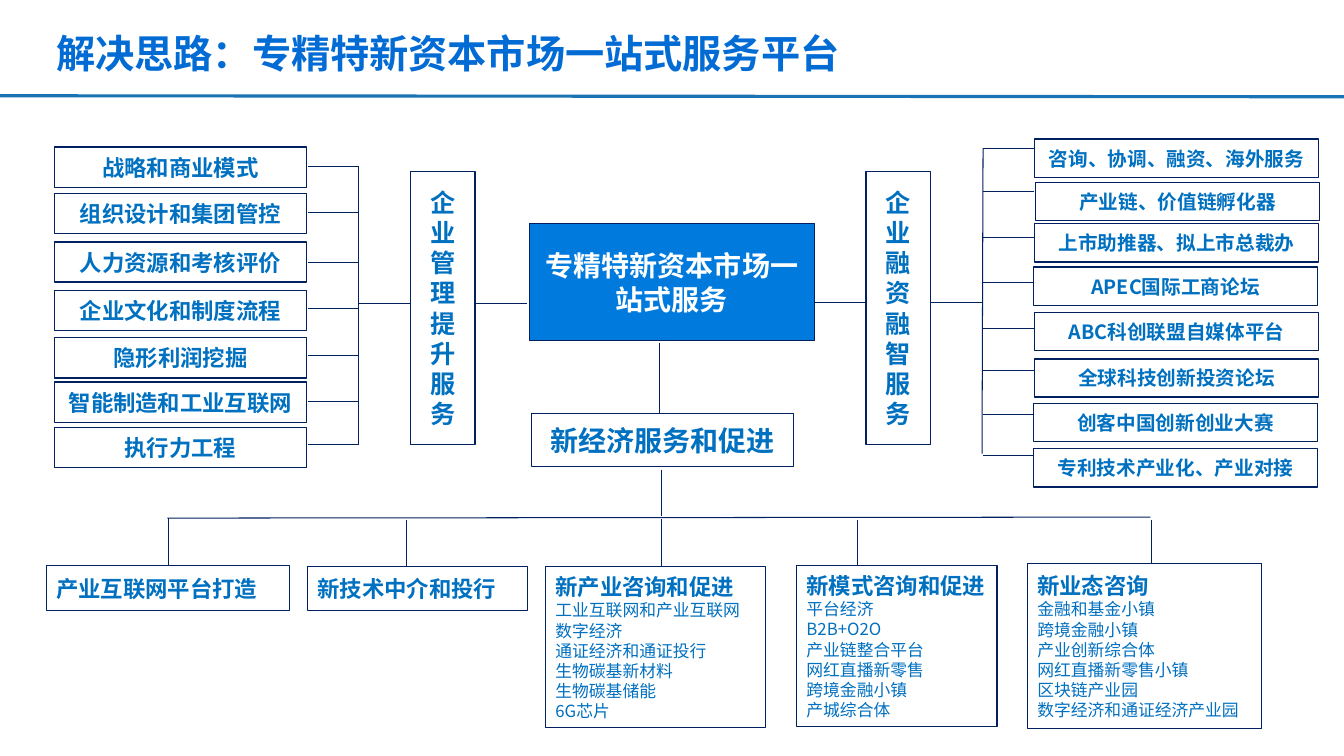
import pptx
import pptx.util
import pptx.dml.color
import pptx.enum.shapes
import pptx.enum.text
import pptx.oxml.ns
import lxml.etree

Inches = pptx.util.Inches
Pt = pptx.util.Pt
qn = pptx.oxml.ns.qn
RGBColor = pptx.dml.color.RGBColor
PP_ALIGN = pptx.enum.text.PP_ALIGN

FONT = "Noto Sans CJK SC"
COLORS = {
    "title": "026CD4",
    "rule": "1A73B3",
    "center": "007ADD",
    "outline": "002060",
    "text": "0070C0",
    "white": "FFFFFF",
}

presentation = pptx.Presentation()
presentation.slide_width = Inches(13.33)
presentation.slide_height = Inches(7.5)
slide = presentation.slides.add_slide(presentation.slide_layouts[6])
slide.background.fill.solid()
slide.background.fill.fore_color.rgb = RGBColor.from_string(COLORS["white"])


def add_line(x1, y1, x2, y2, color="outline", width=0.75):
    connector = slide.shapes.add_connector(
        pptx.enum.shapes.MSO_CONNECTOR.STRAIGHT,
        Inches(x1), Inches(y1), Inches(x2), Inches(y2))
    connector.line.color.rgb = RGBColor.from_string(COLORS[color])
    connector.line.width = Pt(width)
    properties = connector._element.find(qn("p:spPr"))
    lxml.etree.SubElement(properties, qn("a:effectLst"))


def add_box(left, top, width, height, lines, size, color="text", fill="white",
            align=PP_ALIGN.CENTER):
    shape = slide.shapes.add_shape(
        pptx.enum.shapes.MSO_SHAPE.RECTANGLE,
        Inches(left), Inches(top), Inches(width), Inches(height))
    shape.shadow.inherit = False
    if fill:
        shape.fill.solid()
        shape.fill.fore_color.rgb = RGBColor.from_string(COLORS[fill])
        shape.line.color.rgb = RGBColor.from_string(COLORS["outline"])
        shape.line.width = Pt(1)
    else:
        shape.fill.background()
        shape.line.fill.background()
    frame = shape.text_frame
    frame.word_wrap = fill is not None
    frame.vertical_anchor = pptx.enum.text.MSO_ANCHOR.MIDDLE
    for index, line in enumerate(lines):
        paragraph = frame.add_paragraph() if index else frame.paragraphs[0]
        paragraph.text = line
        paragraph.alignment = align
        paragraph.font.size = Pt(12 if index else size)
        paragraph.font.bold = index == 0
        paragraph.font.color.rgb = RGBColor.from_string(COLORS[color])
        paragraph.font.name = FONT
        defaults = paragraph._p.pPr.find(qn("a:defRPr"))
        lxml.etree.SubElement(defaults, qn("a:ea"), typeface=FONT)


add_line(0, 0.95, 13.33, 0.96, "rule", 2.25)
add_box(0.46, 0.24, 7.98, 0.57, ["解决思路：专精特新资本市场一站式服务平台"], 28,
        "title", None, PP_ALIGN.LEFT)

add_box(5.25, 2.22, 2.83, 1.16, ["专精特新资本市场一站式服务"], 20, "white", "center")
add_box(4.07, 1.7, 0.64, 2.71, ["企业管理提升服务"], 18)
add_box(8.59, 1.7, 0.64, 2.71, ["企业融资融智服务"], 18)
add_line(3.56, 3.01, 4.07, 3.01)
add_line(4.72, 3.01, 5.23, 3.01)
add_line(8.08, 3, 8.59, 3)
add_line(9.23, 3, 9.74, 3)

management_services = [
    ("战略和商业模式", 1.46, 1.65),
    ("组织设计和集团管控", 1.92, 2.11),
    ("人力资源和考核评价", 2.4, 2.6),
    ("企业文化和制度流程", 2.88, 3.06),
    ("隐形利润挖掘", 3.35, 3.53),
    ("智能制造和工业互联网", 3.79, 3.98),
    ("执行力工程", 4.24, 4.41),
]
add_line(3.56, 1.65, 3.56, 4.41)
for label, top, branch in management_services:
    add_line(3.05, branch, 3.56, branch)
    add_box(0.54, top, 2.5, 0.4, [label], 16)

financing_services = [
    ("咨询、协调、融资、海外服务", 10.26, 1.38, 1.47),
    ("产业链、价值链孵化器", 10.27, 1.81, 1.9),
    ("上市助推器、拟上市总裁办", 10.26, 2.22, 2.36),
    ("APEC国际工商论坛", 10.25, 2.65, 2.8),
    ("ABC科创联盟自媒体平台", 10.26, 3.1, 3.26),
    ("全球科技创新投资论坛", 10.26, 3.56, 3.68),
    ("创客中国创新创业大赛", 10.25, 4, 4.11),
    ("专利技术产业化、产业对接", 10.25, 4.45, 4.52),
]
add_line(9.75, 1.47, 9.74, 4.5)
for label, left, top, branch in financing_services:
    add_line(9.75, branch, 10.26, branch)
    add_box(left, top, 2.82, 0.38, [label], 14)

add_line(6.54, 3.4, 6.54, 4.12)
add_box(5.27, 4.1, 2.6, 0.53, ["新经济服务和促进"], 20)
add_line(6.56, 4.66, 6.56, 5.12)
add_line(1.66, 5.14, 11.41, 5.13)

new_economy_services = [
    (1.67, 5.14, 0.46, 5.61, 2.41, 0.45, ["产业互联网平台打造"]),
    (4.03, 5.16, 3.05, 5.62, 2.18, 0.44, ["新技术中介和投行"]),
    (6.56, 5.15, 5.41, 5.62, 2.18, 1.6, [
        "新产业咨询和促进", "工业互联网和产业互联网", "数字经济",
        "通证经济和通证投行", "生物碳基新材料", "生物碳基储能", "6G芯片"]),
    (8.5, 5.16, 7.9, 5.61, 1.99, 1.6, [
        "新模式咨询和促进", "平台经济", "B2B+O2O", "产业链整合平台",
        "网红直播新零售", "跨境金融小镇", "产城综合体"]),
    (11.42, 5.16, 10.19, 5.59, 2.32, 1.64, [
        "新业态咨询", "金融和基金小镇", "跨境金融小镇", "产业创新综合体",
        "网红直播新零售小镇", "区块链产业园", "数字经济和通证经济产业园"]),
]
for stem, stem_top, left, top, width, height, lines in new_economy_services:
    add_line(stem, stem_top, stem, stem_top + 0.47)
    add_box(left, top, width, height, lines, 16, align=PP_ALIGN.LEFT)

presentation.save("out.pptx")
